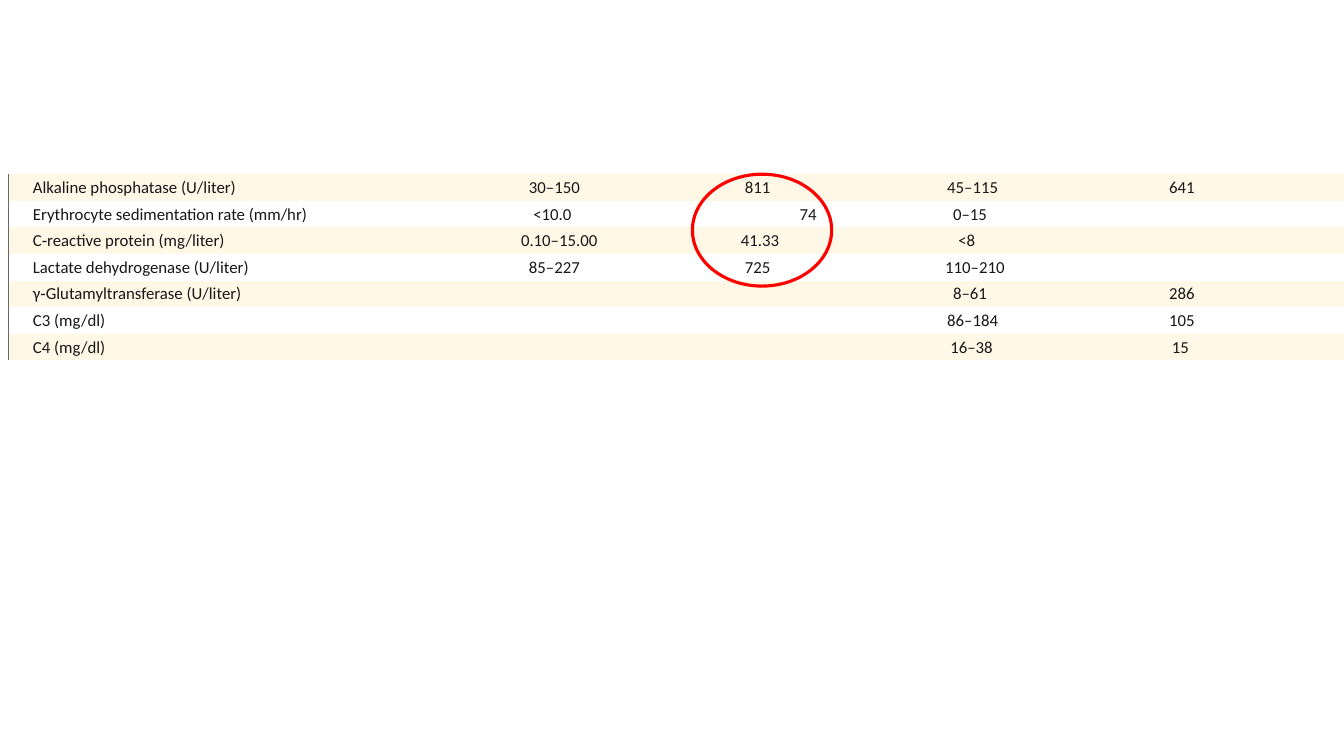
import pptx
import pptx.dml.color
import pptx.enum.shapes
import pptx.enum.text
import pptx.oxml
import pptx.oxml.ns
import pptx.util
from pptx.util import Cm

CREAM = pptx.dml.color.RGBColor(0xFF, 0xF8, 0xE7)
INK = pptx.dml.color.RGBColor(0x18, 0x17, 0x17)
GREY = pptx.dml.color.RGBColor(0x66, 0x67, 0x67)
RED = pptx.dml.color.RGBColor(0xFF, 0x00, 0x00)
NO_GRID_STYLE = "{2D5ABB26-0587-4C30-8999-92F81FD0307C}"
FONT_SIZE = 12

COLUMN_WIDTHS = [12.12, 5.18, 5.38, 5.46, 5.51]
ROW_HEIGHT = 0.67
LABEL_MARGIN = 0.2
FIRST_LINE_INDENT = 0.41
CENTRED = None
EMPTY = ("", 0)

# Each row: test name, then (value, left margin in cm) for every other column
LAB_ROWS = [
    ("Alkaline phosphatase (U/liter)",
     [("30–150", 0.58), ("811", 0.84), ("45–115", 0.56), ("641", 0.69)]),
    ("Erythrocyte sedimentation rate (mm/hr)",
     [("<10.0", 0.69), ("74", CENTRED), ("0–15", 0.71), EMPTY]),
    ("C‑reactive protein (mg/liter)",
     [("0.10–15.00", 0.38), ("41.33", 0.74), ("<8", 0.84), EMPTY]),
    ("Lactate dehydrogenase (U/liter)",
     [("85–227", 0.58), ("725", 0.84), ("110–210", 0.51), EMPTY]),
    ("γ‑Glutamyltransferase (U/liter)",
     [EMPTY, EMPTY, ("8–61", 0.71), ("286", 0.69)]),
    ("C3 (mg/dl)",
     [EMPTY, EMPTY, ("86–184", 0.56), ("105", 0.69)]),
    ("C4 (mg/dl)",
     [EMPTY, EMPTY, ("16–38", 0.64), ("15", 0.76)]),
]


def write_text(frame, text, size=FONT_SIZE, color=INK, font="Calibri", margin=0):
    """Write one paragraph with a first-line indent; margin None centres it."""
    para = frame.paragraphs[0]
    para.line_spacing = 1.07
    properties = para._p.get_or_add_pPr()
    properties.set("marL", str(Cm(margin or 0)))
    properties.set("indent", str(Cm(FIRST_LINE_INDENT)))
    if margin is CENTRED:
        para.alignment = pptx.enum.text.PP_ALIGN.CENTER
    if text:
        span = para.add_run()
        span.text = text
        span.font.size = pptx.util.Pt(size)
        span.font.name = font
        span.font.color.rgb = color
    else:
        # An empty cell still needs its text size, or the row grows
        end = pptx.oxml.parse_xml(
            f'<a:endParaRPr {pptx.oxml.ns.nsdecls("a")} sz="{size * 100}"/>')
        para._p.append(end)


def add_left_border(cell, color, width):
    border = pptx.oxml.parse_xml(
        f'<a:lnL {pptx.oxml.ns.nsdecls("a")} w="{pptx.util.Pt(width)}">'
        f'<a:solidFill><a:srgbClr val="{color}"/></a:solidFill></a:lnL>')
    cell._tc.get_or_add_tcPr().insert(0, border)


def fill_cell(cell, text, margin, shaded):
    cell.margin_left = 0
    cell.margin_top = Cm(0.05)
    cell.margin_right = Cm(0.1)
    cell.margin_bottom = Cm(0.03)
    if shaded:
        cell.fill.solid()
        cell.fill.fore_color.rgb = CREAM
    else:
        cell.fill.background()
    write_text(cell.text_frame, text, margin=margin)


def add_lab_table(page, left, top):
    frame = page.shapes.add_table(
        len(LAB_ROWS), len(COLUMN_WIDTHS), Cm(left), Cm(top),
        Cm(sum(COLUMN_WIDTHS)), Cm(ROW_HEIGHT * len(LAB_ROWS)))
    table = frame.table
    table.first_row = False
    table.horz_banding = False
    table._tbl.tblPr.find(pptx.oxml.ns.qn("a:tableStyleId")).text = NO_GRID_STYLE
    for column, width in zip(table.columns, COLUMN_WIDTHS):
        column.width = Cm(width)
    for row_number, (label, values) in enumerate(LAB_ROWS):
        table.rows[row_number].height = Cm(ROW_HEIGHT)
        entries = [(label, LABEL_MARGIN)] + values
        for column_number, (text, margin) in enumerate(entries):
            cell = table.cell(row_number, column_number)
            fill_cell(cell, text, margin, shaded=row_number % 2 == 0)
        add_left_border(table.cell(row_number, 0), GREY, 1)


def add_ring(page, left, top, width, height):
    ring = page.shapes.add_shape(
        pptx.enum.shapes.MSO_SHAPE.OVAL, Cm(left), Cm(top), Cm(width), Cm(height))
    ring.shadow.inherit = False
    ring.fill.background()
    ring.line.color.rgb = RED
    ring.line.width = pptx.util.Pt(2.25)


def main():
    deck = pptx.Presentation()
    deck.slide_width = Cm(33.87)
    deck.slide_height = Cm(19.05)
    page = deck.slides.add_slide(deck.slide_layouts[6])

    # Laboratory values
    add_lab_table(page, 0.22, 4.39)
    # Ring around the abnormal results
    add_ring(page, 17.45, 4.39, 3.51, 2.82)

    deck.save("out.pptx")


if __name__ == "__main__":
    main()
